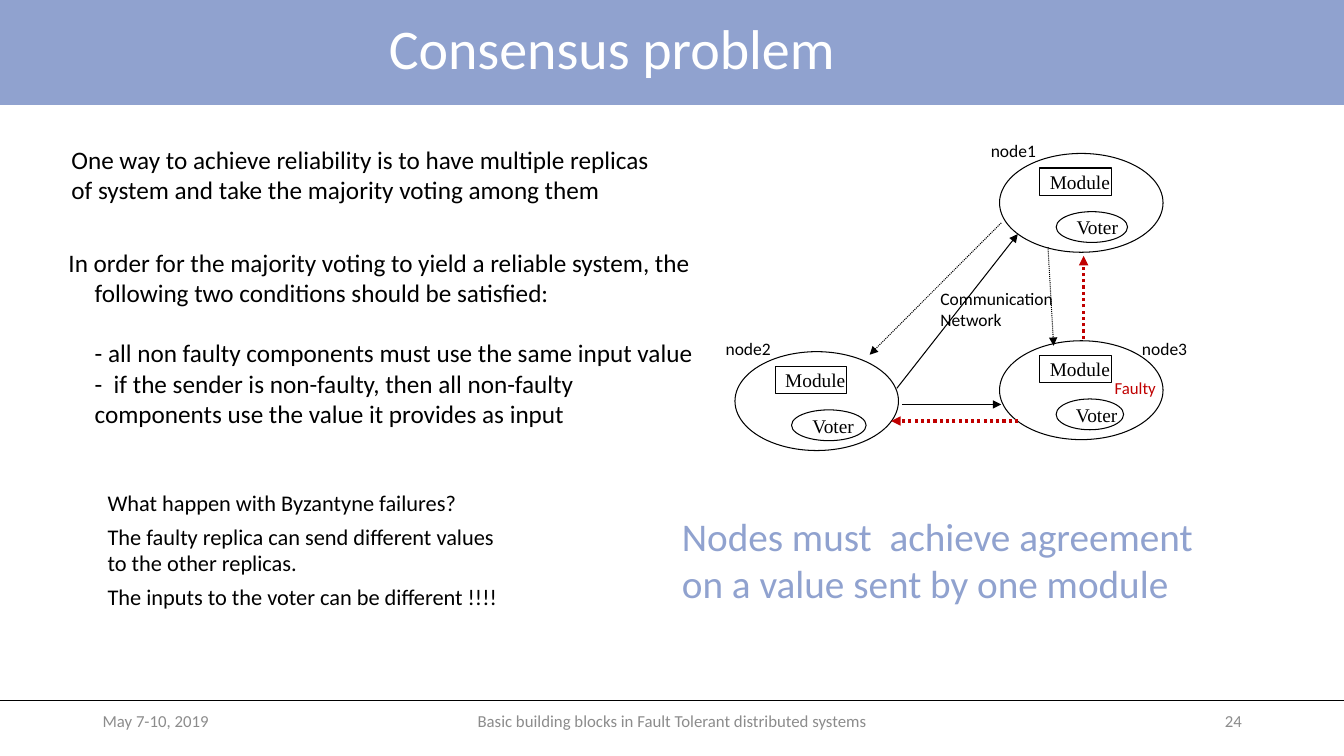
from lxml import etree
from pptx import Presentation
from pptx.dml.color import RGBColor
from pptx.enum.dml import MSO_LINE
from pptx.enum.shapes import MSO_CONNECTOR, MSO_SHAPE
from pptx.enum.text import MSO_ANCHOR, PP_ALIGN
from pptx.oxml.ns import qn
from pptx.util import Pt

BLACK = RGBColor(0x00, 0x00, 0x00)
WHITE = RGBColor(0xFF, 0xFF, 0xFF)
BLUE = RGBColor(0x90, 0xA2, 0xCF)
GREY = RGBColor(0x8C, 0x8C, 0x8C)
RED = RGBColor(0xC0, 0x00, 0x00)
SANS, SERIF = "Calibri", "Times New Roman"
RECT, OVAL = MSO_SHAPE.RECTANGLE, MSO_SHAPE.OVAL
STRAIGHT, DOTS = MSO_CONNECTOR.STRAIGHT, MSO_LINE.ROUND_DOT
LEFT, CENTER, RIGHT = PP_ALIGN.LEFT, PP_ALIGN.CENTER, PP_ALIGN.RIGHT
TOP, MIDDLE = MSO_ANCHOR.TOP, MSO_ANCHOR.MIDDLE
WIDTH, HEIGHT = 960, 540
FOOT = 500.4

# name, node corner, voter width, label corner
NODES = [
    ("node1", (714, 109.6), 51, (700.6, 96.5)),
    ("node2", (525, 251.2), 53.3, (511.2, 237.6)),
    ("node3", (714, 243.4), 48.2, (808.6, 237.6)),
]
# start, end, colour, width, dash
ARROWS = [
    ((715.2, 159.2), (621.2, 253.4), BLACK, 0.75, DOTS),
    ((748.6, 176.6), (752.6, 247), BLACK, 0.75, DOTS),
    ((640.6, 277.4), (727, 167.2), BLACK, 0.75, None),
    ((644.4, 288.9), (715.2, 288.9), BLACK, 0.75, None),
    ((727.2, 300.7), (636.6, 300.7), RED, 2.25, DOTS),
    ((774, 242), (774, 182.8), RED, 2.25, DOTS),
]
FOOTER = [
    (66.2, 216, "May 7-10, 2019", LEFT),
    (318.2, 324,
     "Basic building blocks in Fault Tolerant distributed systems", CENTER),
    (678.2, 216, "24", RIGHT),
]
REASON = [
    "One way to achieve reliability is to have multiple replicas",
    "of system and take the majority voting among them",
]
TERMS = [
    "In order for the majority voting to yield a reliable system, "
    "the following two conditions should be satisfied:",
    "- all non faulty components must use the same input value",
    "-  if the sender is non-faulty, then all non-faulty\v"
    "components use the value it provides as input",
]
FAULTS = [
    "What happen with Byzantyne failures?",
    "The faulty replica can send different values to the other replicas.",
    "The inputs to the voter can be different !!!!",
]
GOAL = ["Nodes must  achieve agreement\von a value sent by one module"]


def box(area):
    return [Pt(side) for side in area]


def style(para, size, color, face=SANS, align=LEFT):
    para.alignment = align
    para.font.size = Pt(size)
    para.font.name = face
    para.font.color.rgb = color


def add_text(slide, area, lines, size, color=BLACK, align=LEFT,
             anchor=TOP, wrap=True, gap=0):
    """Add a text box, one paragraph a line, with gap points between."""
    frame = slide.shapes.add_textbox(*box(area)).text_frame
    frame.word_wrap = wrap
    frame.vertical_anchor = anchor
    for i, line in enumerate(lines):
        para = frame.add_paragraph() if i else frame.paragraphs[0]
        para.text = line
        if i and gap:
            para.space_before = Pt(gap)
        style(para, size, color, align=align)
    return frame


def add_shape(slide, kind, area, label=None):
    """Add a hollow black outline with an optional label."""
    shape = slide.shapes.add_shape(kind, *box(area))
    shape.shadow.inherit = False
    shape.fill.background()
    shape.line.color.rgb = BLACK
    shape.line.width = Pt(0.75)
    if label:
        frame = shape.text_frame
        frame.word_wrap = False
        frame.vertical_anchor = MIDDLE
        frame.text = label
        style(frame.paragraphs[0], 13.8, BLACK, SERIF)


def add_line(slide, start, end, color, width, dash=None, arrow=True):
    link = slide.shapes.add_connector(STRAIGHT, *box(start + end))
    link.line.color.rgb = color
    link.line.width = Pt(width)
    if dash:
        link.line.dash_style = dash
    if arrow:
        line = link.line._get_or_add_ln()
        etree.SubElement(line, qn("a:tailEnd"), type="triangle")
    etree.SubElement(link.element.spPr, qn("a:effectLst"))


def add_title(slide):
    title = slide.shapes.title
    title.left, title.top, title.width, title.height = box((0, 0, 874, 73.4))
    frame = title.text_frame
    frame.text = "Consensus problem"
    frame.vertical_anchor = MIDDLE
    para = frame.paragraphs[0]
    para.line_spacing = 0.9
    style(para, 40, WHITE, align=CENTER)

    band = slide.shapes.add_shape(RECT, *box((0, 0, WIDTH, 75)))
    band.shadow.inherit = False
    band.fill.solid()
    band.fill.fore_color.rgb = BLUE
    band.line.fill.background()
    title.element.addprevious(band.element)


def add_footer(slide):
    add_line(slide, (0, FOOT), (WIDTH, FOOT), BLACK, 0.5, arrow=False)
    for left, width, text, align in FOOTER:
        add_text(slide, (left, FOOT, width, 28.8), [text], 12, GREY,
                 align, MIDDLE)


def add_node(slide, name, corner, width, spot):
    x, y = corner
    add_shape(slide, RECT, (x + 28.8, y + 10.4, 51, 19.6), "Module")
    add_shape(slide, OVAL, (x + 40.4, y + 41.6, width, 22), "Voter")
    add_shape(slide, OVAL, (x, y, 116.8, 70.6))
    add_text(slide, spot + (46.8, 22.3), [name], 12.5, wrap=False)


def add_terms(slide):
    """Add the conditions, the first line hanging out to the left."""
    frame = add_text(slide, (41.8, 172.8, 480, 138.2), TERMS, 18)
    for para in frame.paragraphs:
        para._p.get_or_add_pPr().set("marL", str(Pt(18.7)))
    first, second = frame.paragraphs[:2]
    first._p.get_or_add_pPr().set("indent", str(Pt(-18.7)))
    second.space_before = Pt(21.6)


def main():
    deck = Presentation()
    deck.slide_width, deck.slide_height = Pt(WIDTH), Pt(HEIGHT)
    slide = deck.slides.add_slide(deck.slide_layouts[5])
    add_title(slide)
    add_footer(slide)
    for node in NODES:
        add_node(slide, *node)
    add_text(slide, (664.6, 202.3, 98.6, 37.4),
             ["Communication", "Network"], 12.5, wrap=False)
    for arrow in ARROWS:
        add_line(slide, *arrow)
    add_terms(slide)
    add_text(slide, (43.9, 99.4, 480, 51), REASON, 18)
    add_text(slide, (789.1, 266.4, 54.7, 21.6), ["Faulty"], 12, RED)
    add_text(slide, (69.8, 345.6, 303, 95), FAULTS, 16, gap=5)
    add_text(slide, (480, 362.2, 480, 75), GOAL, 28, BLUE)
    deck.save("out.pptx")


if __name__ == "__main__":
    main()
